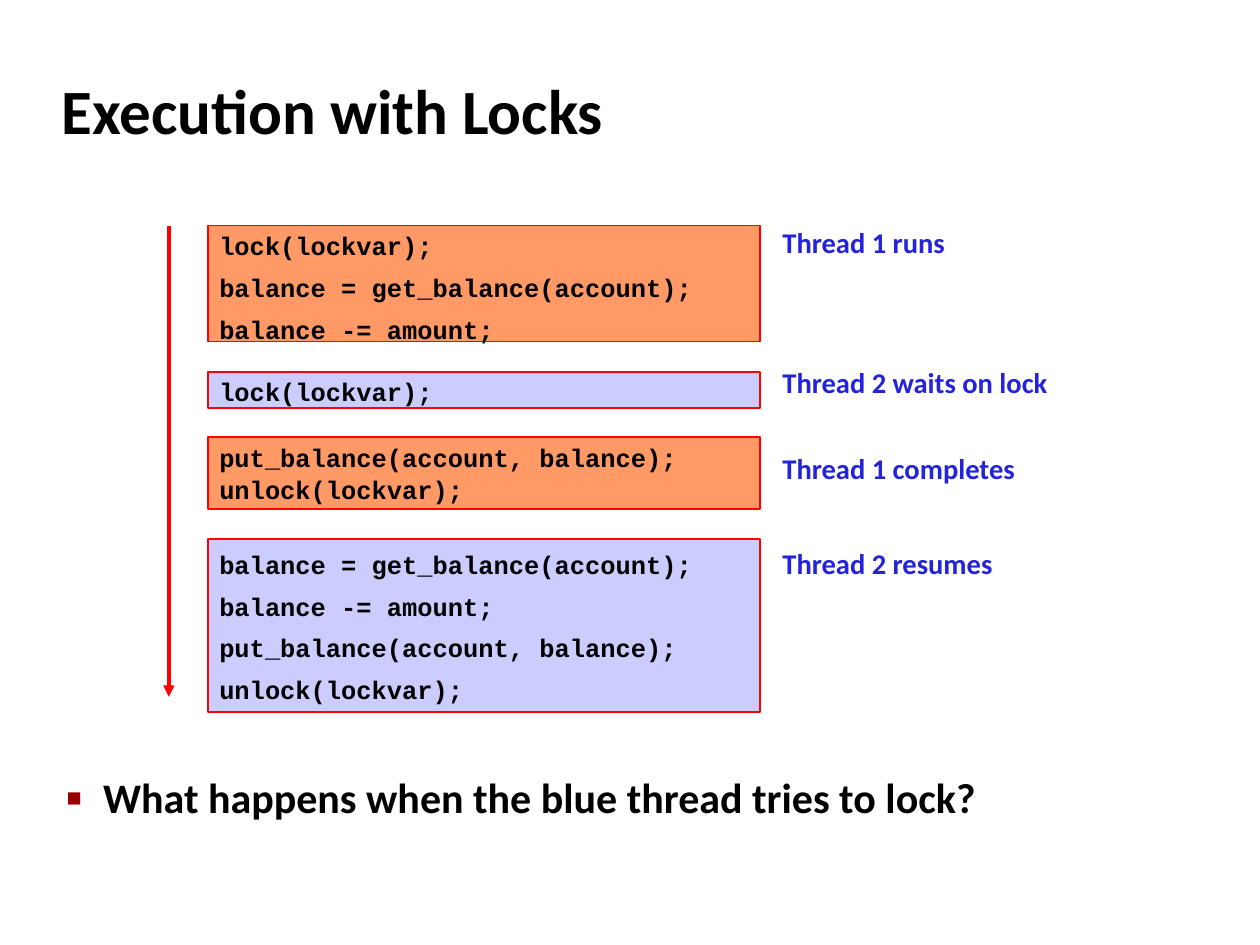
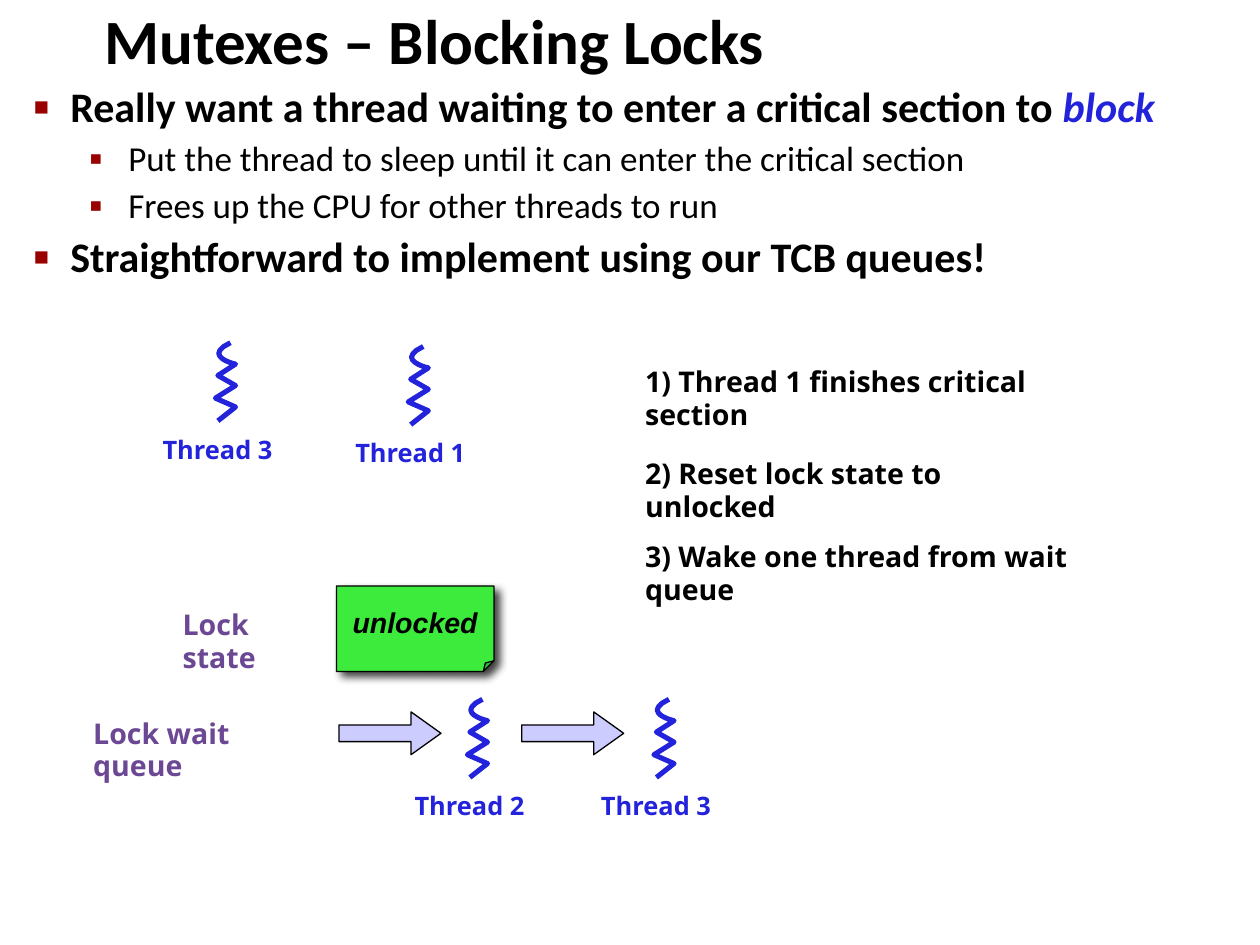
from lxml.etree import SubElement
from pptx import Presentation
from pptx.dml.color import RGBColor
from pptx.enum.shapes import MSO_CONNECTOR, MSO_SHAPE
from pptx.enum.text import MSO_ANCHOR, PP_ALIGN
from pptx.oxml import parse_xml
from pptx.oxml.ns import nsdecls, qn
from pptx.util import Inches, Pt

BLACK, BLUE, PURPLE, RED = "000000", "2323DC", "6B4794", "FF0000"
ORANGE, LILAC, GREEN, BULLET = "FF9966", "CCCCFF", "3DEB3D", "990000"
# Bullet levels: sign, sign size in percent, left margin, hanging indent, text size, bold
LEVELS = [("■", 60, 0.29, 0.29, 24, True), ("▪", 110, 0.75, 0.31, 20, False)]


def rgb(value):
    return RGBColor.from_string(value)


def write(box, paragraphs, size, font="Calibri", colour=BLACK, italic=False,
          inset=(0, 0), wrap=True, anchor=MSO_ANCHOR.TOP, spacing=0.95, before=0):
    """Fill a box with paragraphs; a paragraph is text or (level, [(text, accent), ...])."""
    frame = box.text_frame
    frame.word_wrap = wrap
    frame.vertical_anchor = anchor
    frame.margin_left = frame.margin_right = Inches(inset[0])
    frame.margin_top = frame.margin_bottom = Inches(inset[1])
    for number, content in enumerate(paragraphs):
        para = frame.add_paragraph() if number else frame.paragraphs[0]
        para.alignment = PP_ALIGN.LEFT
        para.line_spacing = spacing
        para.space_before = Pt(before)
        bold, spans = True, [(content, False)]
        if not isinstance(content, str):
            level, spans = content
            sign, percent, margin, hanging, size, bold = LEVELS[level]
            para.level = level
            para.space_before = Pt(size * 0.2)
            props = para._p.get_or_add_pPr()
            props.set("marL", str(Inches(margin)))
            props.set("indent", str(-Inches(hanging)))
            SubElement(SubElement(props, qn("a:buClr")), qn("a:srgbClr"), val=BULLET)
            SubElement(props, qn("a:buSzPct"), val=str(percent * 1000))
            SubElement(props, qn("a:buFont"), typeface="Arial")
            SubElement(props, qn("a:buChar"), char=sign)
        for text, accent in spans:
            span = para.add_run()
            span.text = text
            span.font.name = font
            span.font.size = Pt(size)
            span.font.bold = bold
            span.font.italic = italic or accent
            span.font.color.rgb = rgb(BLUE if accent else colour)


deck = Presentation()
deck.slide_width, deck.slide_height = Inches(10), Inches(7.5)

# Titles and bullet lists of both slides
outlines = [
    ("Execution with Locks", (0.39, 0.48, 8.3, 0.83), (0.43, 6.1, 8.64, 0.83),
     [(0, [("What happens when the blue thread tries to lock?", False)])]),
    ("Mutexes – Blocking Locks", (0.73, 0.08, 8.54, 0.52), (0.17, 0.62, 9.63, 6.14),
     [(0, [("Really want a thread waiting to enter a critical section to ", False),
           ("block", True)]),
      (1, [("Put the thread to sleep until it can enter the critical section", False)]),
      (1, [("Frees up the CPU for other threads to run", False)]),
      (0, [("Straightforward to implement using our TCB queues!", False)])]),
]
pages = []
for title, title_place, list_place, bullets in outlines:
    page = deck.slides.add_slide(deck.slide_layouts[6])
    box = page.shapes.add_textbox(*map(Inches, title_place))
    write(box, [title], 36, inset=(0.1, 0.05), anchor=MSO_ANCHOR.MIDDLE)
    box = page.shapes.add_textbox(*map(Inches, list_place))
    write(box, bullets, 24, inset=(0.1, 0.05))
    pages.append(page)
locks_page, mutex_page = pages

# Code blocks in order of execution: top, height, fill, space before lines, code
blocks = [
    (1.79, 0.92, ORANGE, 6.8, ["lock(lockvar);", "balance = get_balance(account);",
                               "balance -= amount;"]),
    (2.95, 0.29, LILAC, 6.8, ["lock(lockvar);"]),
    (3.47, 0.57, ORANGE, 1.4, ["put_balance(account, balance);", "unlock(lockvar);"]),
    (4.28, 1.37, LILAC, 6.8, ["balance = get_balance(account);", "balance -= amount;",
                              "put_balance(account, balance);", "unlock(lockvar);"]),
]
for top, height, fill, before, code in blocks:
    block = locks_page.shapes.add_shape(
        MSO_SHAPE.RECTANGLE, Inches(1.65), Inches(top), Inches(4.38), Inches(height))
    block.shadow.inherit = False
    block.fill.solid()
    block.fill.fore_color.rgb = rgb(fill)
    block.line.color.rgb = rgb(RED)
    block.line.width = Pt(1)
    write(block, code, 14.5, "Courier New", inset=(0.09, 0.05), spacing=0.98, before=before)
    if len(code) == 4:
        block.text_frame.margin_top = Inches(0.09)

# What each thread does
for top, text in [(1.81, "Thread 1 runs"), (2.92, "Thread 2 waits on lock"),
                  (3.6, "Thread 1 completes"), (4.35, "Thread 2 resumes")]:
    box = locks_page.shapes.add_textbox(Inches(6.21), Inches(top), Inches(2.57), Inches(0.26))
    write(box, [text], 16.3, colour=BLUE)

# Time arrow
arrow = locks_page.shapes.add_connector(
    MSO_CONNECTOR.STRAIGHT, Inches(1.34), Inches(1.79), Inches(1.34), Inches(5.53))
arrow.line.color.rgb = rgb(RED)
arrow.line.width = Pt(2.15)
SubElement(arrow.line._get_or_add_ln(), qn("a:tailEnd"), type="triangle")
SubElement(arrow._element.spPr, qn("a:effectLst"))

# Steps and lock captions
for left, top, width, text, colour in [
        (5.12, 2.91, 3.48, "1) Thread 1 finishes critical section", BLACK),
        (5.12, 3.64, 3.1, "2) Reset lock state to unlocked", BLACK),
        (5.12, 4.3, 3.65, "3) Wake one thread from wait queue", BLACK),
        (1.45, 4.84, 1.03, "Lock state", PURPLE),
        (0.74, 5.7, 1.63, "Lock wait queue", PURPLE)]:
    box = mutex_page.shapes.add_textbox(Inches(left), Inches(top), Inches(width), Inches(0.26))
    write(box, [text], 16.3, "Open Sans", colour, wrap=False)

# Thread squiggle in thousandths of an inch: a curved head, then a zigzag
steps = [n / 10 for n in range(1, 11)]
squiggle = [(230 * (1 - t) ** 3 + 810 * (1 - t) * t ** 2 + 270 * t ** 3,
             330 * (1 - t) ** 2 * t + 510 * (1 - t) * t ** 2 + 170 * t ** 3) for t in steps]
squiggle += [(130, 260), (270, 340), (110, 440), (270, 510), (130, 620)]

for left, top, name in [(1.6, 2.72, "Thread 3"), (3.13, 2.75, "Thread 1"),
                        (3.6, 5.55, "Thread 2"), (5.08, 5.55, "Thread 3")]:
    builder = mutex_page.shapes.build_freeform(230, 0, scale=Inches(1) / 1000)
    builder.add_line_segments(squiggle, close=False)
    thread = builder.convert_to_shape(Inches(left), Inches(top))
    thread.shadow.inherit = False
    thread.fill.background()
    thread.line.color.rgb = rgb(BLUE)
    thread.line.width = Pt(2.89)
    SubElement(thread.line._get_or_add_ln(), qn("a:round"))
    box = mutex_page.shapes.add_textbox(
        Inches(left - 0.31), Inches(top + 0.74), Inches(0.97), Inches(0.47))
    write(box, [name], 14.5, "Open Sans", BLUE, wrap=False)

# Queue arrows and the lock state note
for kind, place, fill in [
        (MSO_SHAPE.RIGHT_ARROW, (2.69, 5.65, 0.81, 0.34), LILAC),
        (MSO_SHAPE.RIGHT_ARROW, (4.14, 5.65, 0.81, 0.34), LILAC),
        (MSO_SHAPE.FOLDED_CORNER, (2.67, 4.65, 1.25, 0.68), GREEN)]:
    shape = mutex_page.shapes.add_shape(kind, *map(Inches, place))
    shape.fill.solid()
    shape.fill.fore_color.rgb = rgb(fill)
    shape.line.color.rgb = rgb(BLACK)
    shape.line.width = Pt(0.75)
    if kind == MSO_SHAPE.RIGHT_ARROW:
        shape.shadow.inherit = False
        shape.adjustments[0], shape.adjustments[1] = 0.39, 0.7
    else:
        write(shape, ["unlocked"], 16.3, "Arial", italic=True, wrap=False,
              anchor=MSO_ANCHOR.MIDDLE)
        shape.text_frame.paragraphs[0].alignment = PP_ALIGN.CENTER
        guides = shape._element.spPr.find(qn("a:prstGeom")).find(qn("a:avLst"))
        SubElement(guides, qn("a:gd"), name="adj", fmla="val 12500")
        shape._element.spPr.append(parse_xml(
            f'<a:effectLst {nsdecls("a")}><a:outerShdw blurRad="{Pt(5)}" dist="{Pt(4.1)}" '
            f'dir="2700000"><a:srgbClr val="{BLACK}"><a:alpha val="75000"/></a:srgbClr>'
            '</a:outerShdw></a:effectLst>'))

deck.save("out.pptx")
